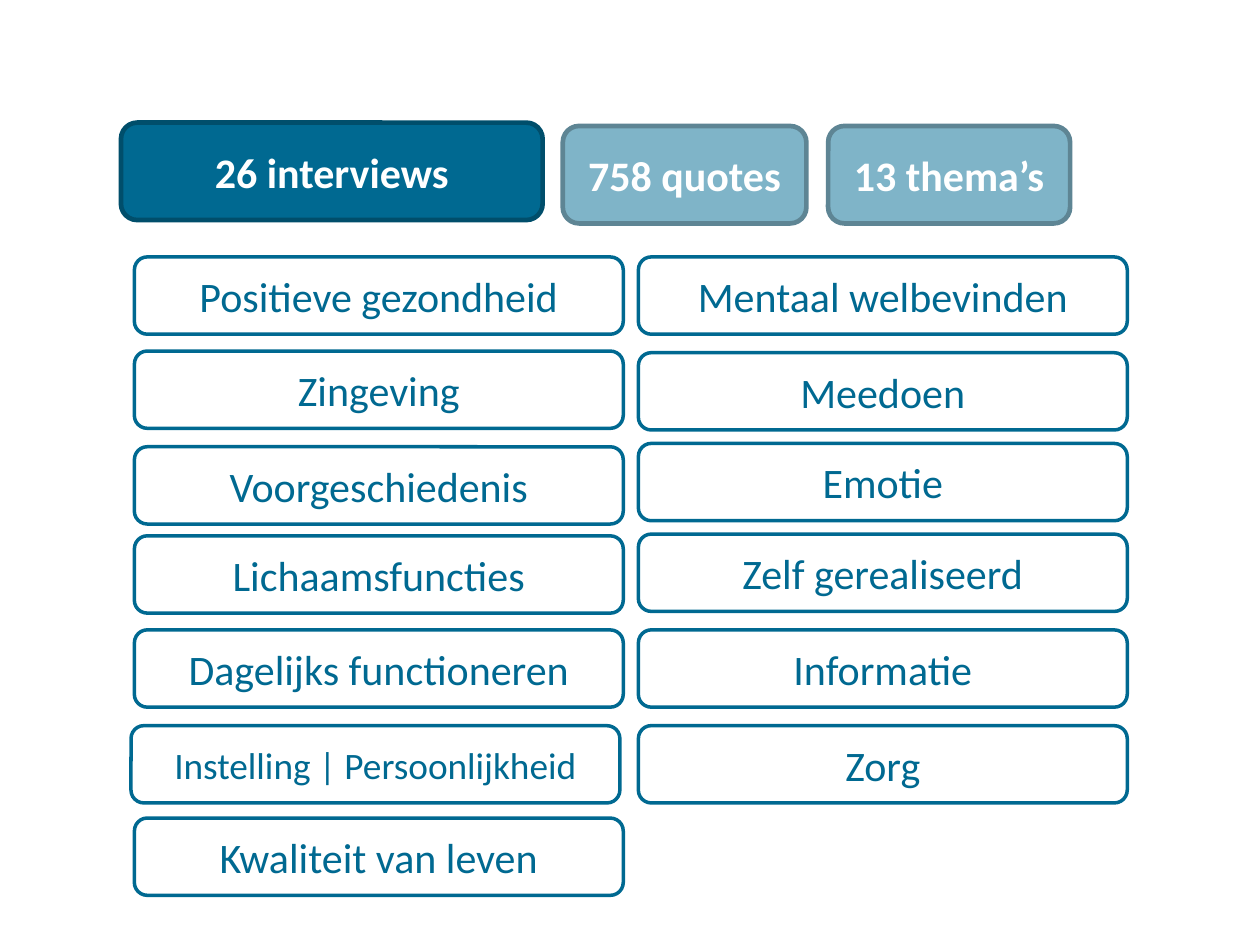
from dataclasses import dataclass

from pptx import Presentation
from pptx.dml.color import RGBColor
from pptx.enum.shapes import MSO_SHAPE
from pptx.enum.text import MSO_ANCHOR, PP_ALIGN
from pptx.util import Inches, Pt


@dataclass(frozen=True)
class Theme:
    font: str = "Calibri"
    blue: str = "006991"
    dark_blue: str = "004E6B"
    pale_blue: str = "7FB4C8"
    grey_blue: str = "5E8594"
    white: str = "FFFFFF"
    text_size: float = 18
    small_size: float = 16
    count_line: float = 2
    topic_line: float = 1.5


THEME = Theme()
SLIDE_WIDTH = Inches(7.5)
SLIDE_HEIGHT = SLIDE_WIDTH * 3 // 4

# Text, left offset, width, top offset, fill, outline
COUNTS = [
    ("26 interviews", 0, 2.51, 0, THEME.blue, THEME.dark_blue),
    ("758 quotes", 2.63, 1.45, 0.02, THEME.pale_blue, THEME.grey_blue),
    ("13 thema’s", 4.21, 1.44, 0.02, THEME.pale_blue, THEME.grey_blue),
]

# Text, left and top offset within the column, fill, type size
LEFT_TOPICS = [
    ("Positieve gezondheid", 0, 0, None, THEME.text_size),
    ("Zingeving", 0, 0.56, None, THEME.text_size),
    ("Voorgeschiedenis", 0, 1.13, None, THEME.text_size),
    ("Lichaamsfuncties", 0, 1.66, THEME.white, THEME.text_size),
    ("Dagelijks functioneren", 0, 2.22, None, THEME.text_size),
    ("Instelling | Persoonlijkheid", -0.02, 2.79, None, THEME.small_size),
    ("Kwaliteit van leven", 0, 3.34, THEME.white, THEME.text_size),
]
RIGHT_TOPICS = [
    ("Mentaal welbevinden", 0, 0, None, THEME.text_size),
    ("Meedoen", 0, 0.57, None, THEME.text_size),
    ("Emotie", 0, 1.11, None, THEME.text_size),
    ("Zelf gerealiseerd", 0, 1.65, None, THEME.text_size),
    ("Informatie", 0, 2.22, THEME.white, THEME.text_size),
    ("Zorg", 0, 2.79, THEME.white, THEME.text_size),
]


def add_label(slide, box, text, fill, outline, line_width, color,
              size=THEME.text_size, bold=False):
    """Draw one rounded label with centred text."""
    label = slide.shapes.add_shape(
        MSO_SHAPE.ROUNDED_RECTANGLE, *(Inches(length) for length in box))
    label.shadow.inherit = False
    if fill:
        label.fill.solid()
        label.fill.fore_color.rgb = RGBColor.from_string(fill)
    else:
        label.fill.background()
    label.line.color.rgb = RGBColor.from_string(outline)
    label.line.width = Pt(line_width)

    frame = label.text_frame
    frame.word_wrap = True
    frame.vertical_anchor = MSO_ANCHOR.MIDDLE
    paragraph = frame.paragraphs[0]
    paragraph.text = text
    paragraph.alignment = PP_ALIGN.CENTER
    paragraph.font.name = THEME.font
    paragraph.font.size = Pt(size)
    paragraph.font.bold = bold
    paragraph.font.color.rgb = RGBColor.from_string(color)


def add_counts(slide, left, top, height):
    """Place the row of totals."""
    for text, offset, width, drop, fill, outline in COUNTS:
        add_label(slide, (left + offset, top + drop, width, height), text,
                  fill, outline, THEME.count_line, THEME.white, bold=True)


def add_topic_column(slide, left, top, width, height, topics):
    """Place a column of outlined topics."""
    for text, shift, drop, fill, size in topics:
        add_label(slide, (left + shift, top + drop, width, height), text,
                  fill, THEME.blue, THEME.topic_line, THEME.blue, size)


def main():
    presentation = Presentation()
    presentation.slide_width = SLIDE_WIDTH
    presentation.slide_height = SLIDE_HEIGHT
    slide = presentation.slides.add_slide(presentation.slide_layouts[6])

    # Totals
    add_counts(slide, 0.72, 0.73, 0.58)

    # Topics in two columns
    for left, topics in ((0.8, LEFT_TOPICS), (3.8, RIGHT_TOPICS)):
        add_topic_column(slide, left, 1.53, 2.91, 0.46, topics)

    presentation.save("out.pptx")


if __name__ == "__main__":
    main()
